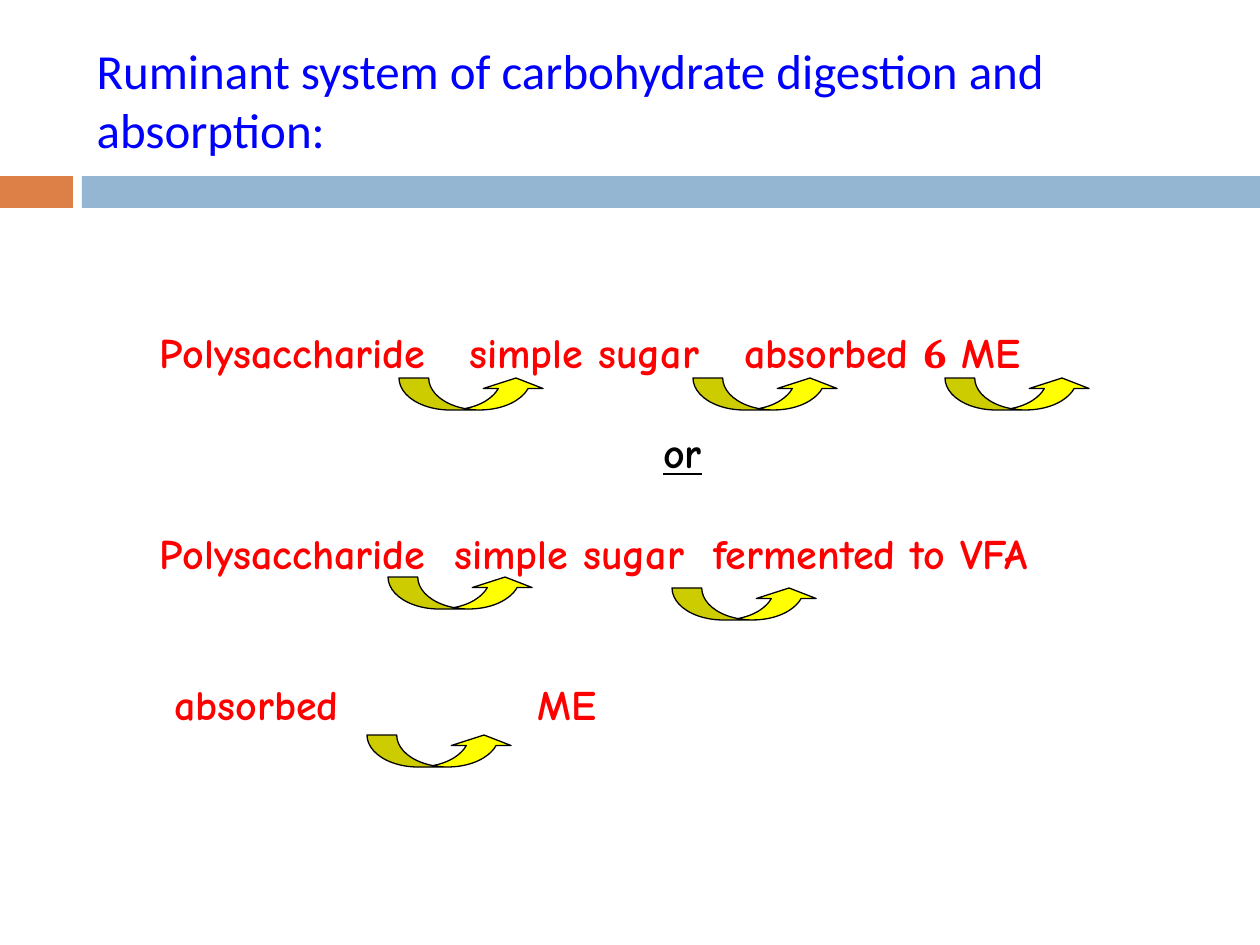
"""Build a slide on how ruminants digest and absorb carbohydrates."""
from dataclasses import dataclass
from typing import NamedTuple

import pptx
import pptx.dml.color
import pptx.enum.shapes
import pptx.enum.text
import pptx.oxml.ns
import pptx.util
from lxml import etree

EMU_PER_PX = 914400 / 126
Color = pptx.dml.color.RGBColor
Preset = pptx.enum.shapes.MSO_SHAPE
Align = pptx.enum.text.PP_ALIGN


@dataclass(frozen=True)
class Theme:
    title_font: str = "Calibri"
    body_font: str = "Comic Neue"
    digit_font: str = "Cambria"
    title_size: int = 28
    body_size: int = 24
    line_pitch: float = 28.8
    title: Color = Color(0x00, 0x00, 0xFF)
    pathway: Color = Color(0xFF, 0x00, 0x00)
    black: Color = Color(0x00, 0x00, 0x00)
    accent: Color = Color(0xDD, 0x80, 0x47)
    band: Color = Color(0x94, 0xB6, 0xD2)
    arrow: Color = Color(0xFF, 0xFF, 0x00)


THEME = Theme()


class Box(NamedTuple):
    left: int
    top: int
    width: int
    height: int


class Words(NamedTuple):
    text: str
    font: str = THEME.body_font
    color: Color = THEME.pathway
    underline: bool = False


class Step(NamedTuple):
    words: tuple[Words, ...]
    lines_before: int = 0
    tab_stops: tuple[int, ...] = ()
    align: Align = Align.LEFT


STEPS = (
    Step((Words("Polysaccharide\tsimple sugar\tabsorbed "),
          Words("6", THEME.digit_font), Words(" ME")), 0, (310, 585)),
    Step((Words("or", color=THEME.black, underline=True),), 1, align=Align.CENTER),
    Step((Words("Polysaccharide\tsimple sugar\tfermented to VFA"),), 1, (295, 554)),
    Step((Words("\tabsorbed\tME"),), 2, (15, 378)),
)
ARROW_SPOTS = ((399, 378), (693, 378), (945, 378), (388, 577), (672, 588), (367, 735))
ARROW_SIZE = (147, 32)
ARROW_BENDS = (0.93, 1.87, 0.33)


def px(length: int) -> pptx.util.Emu:
    return pptx.util.Emu(round(length * EMU_PER_PX))


def place(box: Box) -> tuple[pptx.util.Emu, ...]:
    return tuple(px(length) for length in box)


def add_filled(slide, preset: Preset, box: Box, fill: Color):
    figure = slide.shapes.add_shape(preset, *place(box))
    figure.shadow.inherit = False
    figure.fill.solid()
    figure.fill.fore_color.rgb = fill
    figure.line.fill.background()
    return figure


def add_arrow(slide, left: int, top: int) -> None:
    arrow = add_filled(slide, Preset.CURVED_UP_ARROW, Box(left, top, *ARROW_SIZE), THEME.arrow)
    arrow.line.color.rgb = THEME.black
    arrow.line.width = pptx.util.Pt(0.75)
    for index, bend in enumerate(ARROW_BENDS):
        arrow.adjustments[index] = bend


def add_words(paragraph, words: Words, size: int, bold: bool) -> None:
    run = paragraph.add_run()
    run.text = words.text
    run.font.name = words.font
    run.font.size = pptx.util.Pt(size)
    run.font.bold = bold
    run.font.underline = words.underline
    run.font.color.rgb = words.color


def set_tab_stops(paragraph, stops: tuple[int, ...]) -> None:
    qn = pptx.oxml.ns.qn
    tab_list = etree.SubElement(paragraph._p.get_or_add_pPr(), qn("a:tabLst"))
    for stop in stops:
        etree.SubElement(tab_list, qn("a:tab"), pos=str(px(stop)), algn="l")


def add_title(slide, box: Box, text: str) -> None:
    title = slide.shapes.title
    title.left, title.top, title.width, title.height = place(box)
    frame = title.text_frame
    frame.auto_size = pptx.enum.text.MSO_AUTO_SIZE.NONE
    frame.vertical_anchor = pptx.enum.text.MSO_ANCHOR.MIDDLE
    heading = frame.paragraphs[0]
    heading.alignment = Align.LEFT
    add_words(heading, Words(text, THEME.title_font, THEME.title), THEME.title_size, False)


def add_pathways(slide, box: Box, steps: tuple[Step, ...]) -> None:
    frame = slide.shapes.add_textbox(*place(box)).text_frame
    frame.word_wrap = True
    frame.margin_top = px(32)
    for index, step in enumerate(steps):
        paragraph = frame.add_paragraph() if index else frame.paragraphs[0]
        paragraph.alignment = step.align
        paragraph.line_spacing = pptx.util.Pt(THEME.line_pitch)
        paragraph.space_before = pptx.util.Pt(step.lines_before * THEME.line_pitch)
        if step.tab_stops:
            set_tab_stops(paragraph, step.tab_stops)
        for words in step.words:
            add_words(paragraph, words, THEME.body_size, True)


def main() -> None:
    deck = pptx.Presentation()
    deck.slide_width, deck.slide_height = px(1260), px(945)
    slide = deck.slides.add_slide(deck.slide_layouts.get_by_name("Title Only"))
    add_filled(slide, Preset.RECTANGLE, Box(0, 176, 73, 32), THEME.accent)
    add_filled(slide, Preset.RECTANGLE, Box(82, 176, 1178, 32), THEME.band)
    add_title(slide, Box(84, 31, 1124, 136),
              "Ruminant system of carbohydrate digestion and absorption:")
    add_pathways(slide, Box(147, 294, 1071, 512), STEPS)
    for left, top in ARROW_SPOTS:
        add_arrow(slide, left, top)
    deck.save("out.pptx")


if __name__ == "__main__":
    main()
